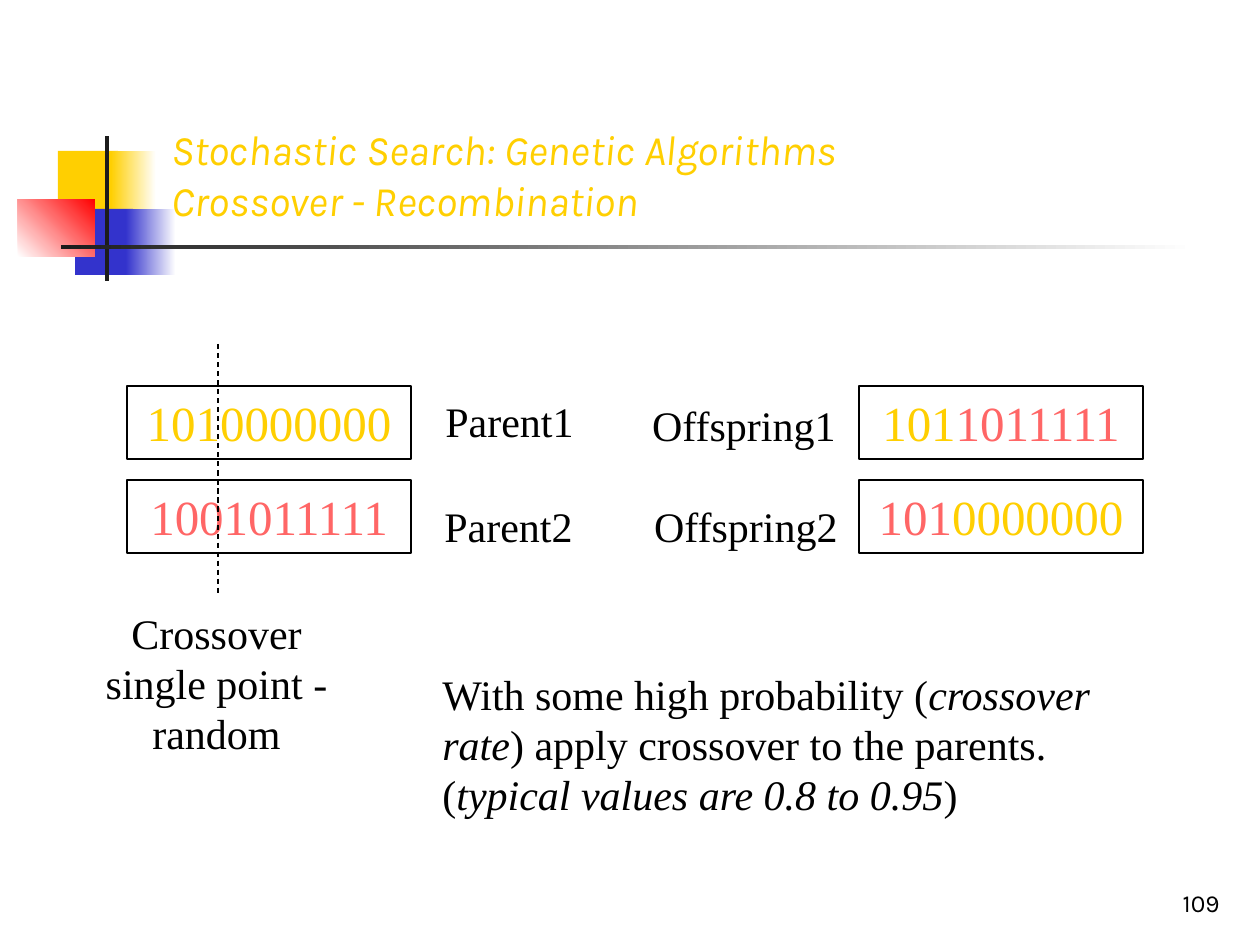
from lxml import etree
from pptx import Presentation
from pptx.dml.color import RGBColor
from pptx.enum.dml import MSO_LINE
from pptx.enum.shapes import MSO_CONNECTOR, MSO_SHAPE
from pptx.enum.text import MSO_ANCHOR, PP_ALIGN
from pptx.oxml.ns import qn
from pptx.util import Pt

PX = 914400 / 126
LEFT, CENTER, RIGHT = PP_ALIGN.LEFT, PP_ALIGN.CENTER, PP_ALIGN.RIGHT
TOP, BOTTOM = MSO_ANCHOR.TOP, MSO_ANCHOR.BOTTOM
RECT, STRAIGHT, DASH = MSO_SHAPE.RECTANGLE, MSO_CONNECTOR.STRAIGHT, MSO_LINE.DASH

YELLOW = RGBColor(0xFF, 0xCF, 0x01)
BLUE = RGBColor(0x33, 0x33, 0xCC)
RED = RGBColor(0xFF, 0x00, 0x00)
CORAL = RGBColor(0xFF, 0x66, 0x66)
DARK = RGBColor(0x1C, 0x1C, 0x1C)
BLACK = RGBColor(0x00, 0x00, 0x00)
WHITE = RGBColor(0xFF, 0xFF, 0xFF)

SANS, SERIF = "Karla", "Times New Roman"
GENE_W, GENE_H, GENE_STEP = 284, 73, 94


def emu(*lengths):
    return [round(n * PX) for n in lengths]


def write(sp, runs, size, font=SERIF, align=LEFT, anchor=TOP):
    """Fill a shape with one paragraph of (text, colour, italic) runs."""
    tf = sp.text_frame
    tf.word_wrap = True
    tf.vertical_anchor = anchor
    p = tf.paragraphs[0]
    p.alignment = align
    for text, color, italic in runs:
        for i, line in enumerate(text.split("\n")):
            if i:
                p.add_line_break()
            r = p.add_run()
            r.text = line
            r.font.size = Pt(size)
            r.font.name = font
            r.font.italic = italic
            r.font.color.rgb = color


def add_text(s, box, runs, size=24, **style):
    write(s.shapes.add_textbox(*emu(*box)), runs, size, **style)


def add_block(s, box, color, end=None, angle=0):
    """Add a borderless rectangle, fading to the end colour if there is one."""
    sp = s.shapes.add_shape(RECT, *emu(*box))
    sp.shadow.inherit = False
    sp.line.fill.background()
    if end is None:
        sp.fill.solid()
        sp.fill.fore_color.rgb = color
        return
    sp.fill.gradient()
    sp.fill.gradient_angle = angle
    for stop, rgb, position in zip(sp.fill.gradient_stops, (color, end), (0, 1)):
        stop.color.rgb = rgb
        stop.position = position


def add_ornament(s, x, y):
    add_block(s, (x + 40, y + 15, 60, 66), YELLOW)
    add_block(s, (x + 93, y + 15, 45, 66), YELLOW, WHITE)
    add_block(s, (x + 57, y + 73, 58, 66), BLUE)
    add_block(s, (x + 108, y + 73, 50, 66), BLUE, WHITE)
    add_block(s, (x, y + 63, 77, 58), WHITE, RED, 45)
    add_block(s, (x + 87, y, 4, 145), DARK)
    add_block(s, (x + 43, y + 109, 1134, 4), DARK, WHITE)


def add_genes(s, x, y, chromosomes):
    """Stack framed chromosomes, each a list of (bits, colour) parts."""
    for i, parts in enumerate(chromosomes):
        sp = s.shapes.add_shape(RECT, *emu(x, y + i * GENE_STEP, GENE_W, GENE_H))
        sp.shadow.inherit = False
        sp.fill.background()
        sp.line.color.rgb = BLACK
        sp.line.width = Pt(0.75)
        write(sp, [(bits, color, False) for bits, color in parts], 28, align=CENTER)


def add_parents(s, x, y):
    add_genes(s, x, y, [[("1010000000", YELLOW)], [("1001011111", CORAL)]])
    cut = s.shapes.add_connector(STRAIGHT, *emu(x + 91, y - 42, x + 91, y + 210))
    cut.line.color.rgb = BLACK
    cut.line.width = Pt(0.75)
    cut.line.dash_style = DASH
    etree.SubElement(cut._element.spPr, qn("a:effectLst"))
    add_text(s, (x - 34, y + 215, 247, 164),
             [("Crossover single point - random", BLACK, False)], align=CENTER)
    add_text(s, (x + 306, y + 3, 212, 63), [("Parent1", BLACK, False)])
    add_text(s, (x + 305, y + 108, 158, 63), [("Parent2", BLACK, False)])


def add_offspring(s, x, y):
    add_genes(s, x, y, [[("101", YELLOW), ("1011111", CORAL)],
                        [("101", CORAL), ("0000000", YELLOW)]])
    add_text(s, (x - 235, y + 7, 224, 63), [("Offspring1", BLACK, False)], align=RIGHT)
    add_text(s, (x - 233, y + 108, 224, 63), [("Offspring2", BLACK, False)], align=RIGHT)


def main():
    prs = Presentation()
    prs.slide_width, prs.slide_height = emu(1260, 945)
    s = prs.slides.add_slide(prs.slide_layouts[6])
    add_ornament(s, 18, 136)
    add_text(s, (970, 861, 262, 63), [("109", BLACK, False)], 14,
             font=SANS, align=RIGHT, anchor=BOTTOM)
    add_text(s, (159, 29, 1074, 202),
             [("Stochastic Search: Genetic Algorithms\nCrossover - Recombination",
               YELLOW, True)], font=SANS, anchor=BOTTOM)
    add_parents(s, 127, 386)
    add_offspring(s, 859, 386)
    add_text(s, (430, 662, 709, 164), [
        ("With some high probability (", BLACK, False),
        ("crossover rate", BLACK, True),
        (") apply crossover to the parents. (", BLACK, False),
        ("typical values are 0.8 to 0.95", BLACK, True),
        (")", BLACK, False),
    ])
    prs.save("out.pptx")


if __name__ == "__main__":
    main()
